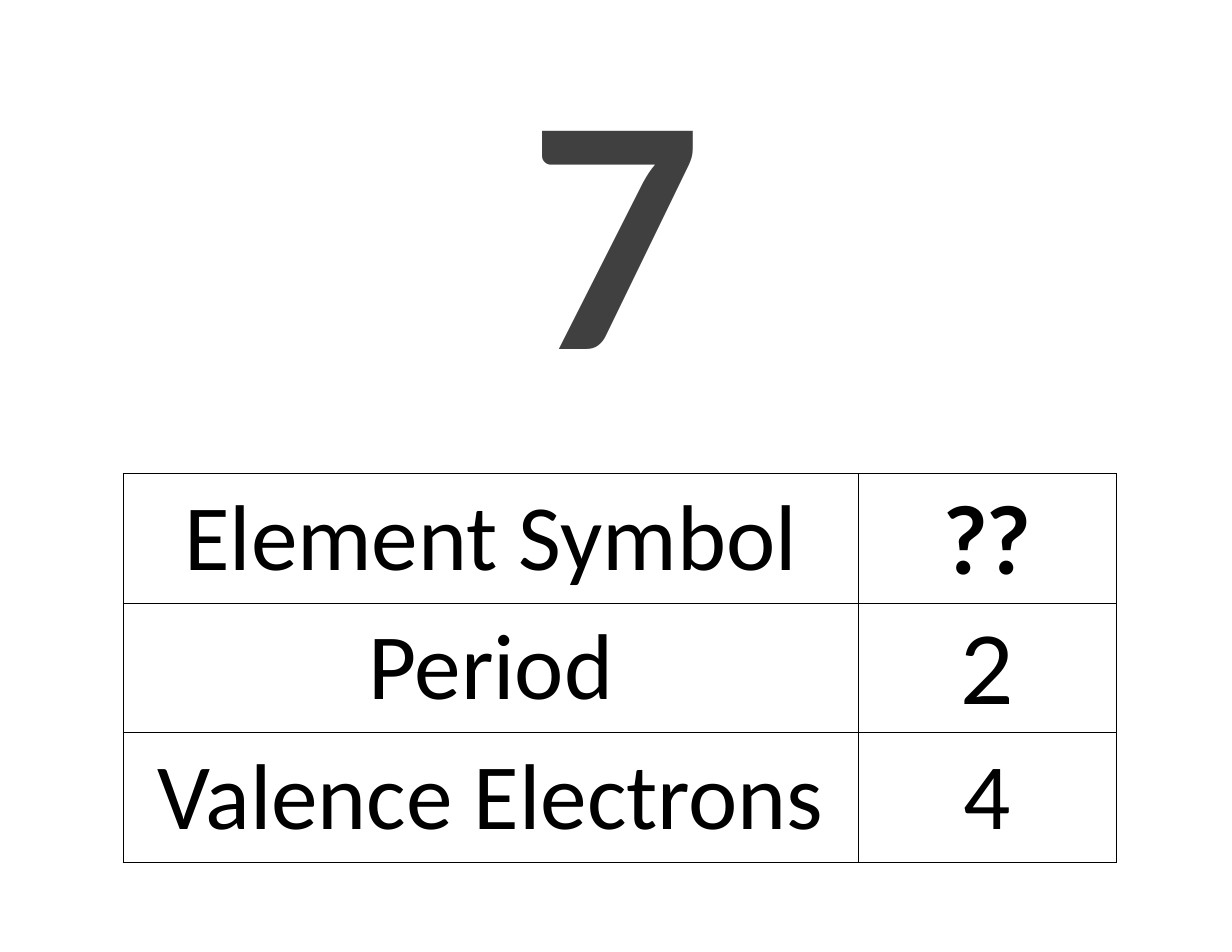
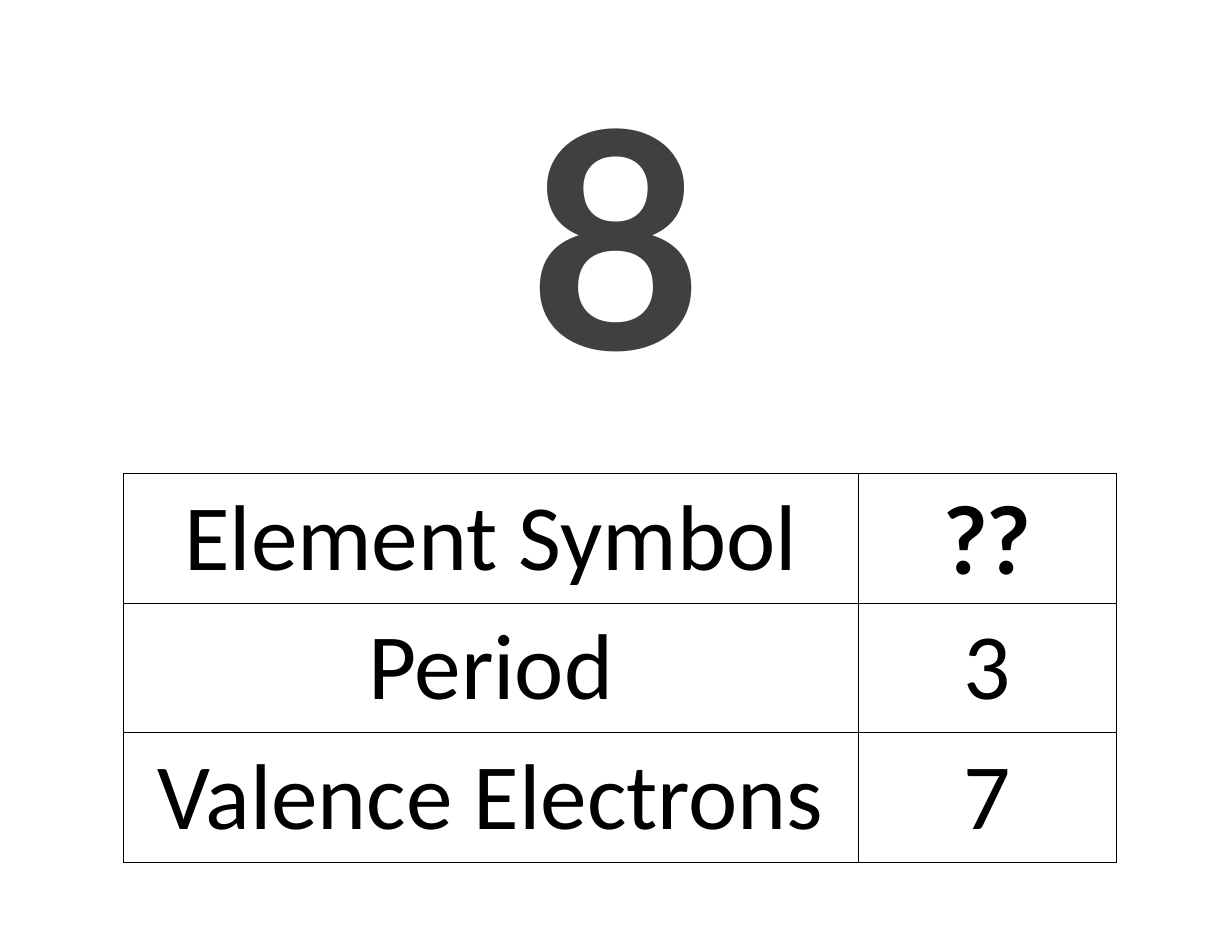
import pptx
import pptx.dml.color
import pptx.enum.text
import pptx.oxml.ns
import pptx.util
from lxml import etree

BLACK = pptx.dml.color.RGBColor(0x00, 0x00, 0x00)
CHARCOAL = pptx.dml.color.RGBColor(0x40, 0x40, 0x40)
BODY_FONT = "Calibri"
ACCENT_FONT = "Lato"
MIDDLE = pptx.enum.text.MSO_ANCHOR.MIDDLE
CENTER = pptx.enum.text.PP_ALIGN.CENTER

SLIDE_WIDTH, SLIDE_HEIGHT = 11, 8.5
NUMBER_BOX = (0, 0.76, SLIDE_WIDTH, 2.98)
TABLE_BOX = (1.1, 4.23, 8.87, 3.47)
LABEL_SHARE = 0.74
LABELS = ("Element Symbol", "Period", "Valence Electrons")

CARDS = (
    ("7", (("??", ACCENT_FONT, True), ("2", ACCENT_FONT, False), ("4", BODY_FONT, False))),
    ("8", (("??", ACCENT_FONT, True), ("3", BODY_FONT, False), ("7", BODY_FONT, False))),
)


def write(frame, text, font, size, color, bold=False):
    para = frame.paragraphs[0]
    para.text = text
    para.alignment = CENTER
    para.font.name = font
    para.font.size = pptx.util.Pt(size)
    para.font.bold = bold
    para.font.color.rgb = color
    return para


def add_number(page, box, number):
    frame = page.shapes.add_textbox(*map(pptx.util.Inches, box)).text_frame
    frame.word_wrap = True
    frame.vertical_anchor = MIDDLE
    para = write(frame, number, ACCENT_FONT, 194, CHARCOAL, True)
    para.line_spacing = 0.9


def add_borders(cell):
    properties = cell._tc.get_or_add_tcPr()
    for position, side in enumerate(("lnL", "lnR", "lnT", "lnB")):
        line = etree.Element(pptx.oxml.ns.qn(f"a:{side}"), w=str(pptx.util.Pt(1)))
        fill = etree.SubElement(line, pptx.oxml.ns.qn("a:solidFill"))
        etree.SubElement(fill, pptx.oxml.ns.qn("a:srgbClr"), val=str(BLACK))
        properties.insert(position, line)


def add_facts(page, box, values):
    table = page.shapes.add_table(len(LABELS), 2, *map(pptx.util.Inches, box)).table
    table.first_row = False
    table.horz_banding = False
    width, height = box[2:]
    for column, share in zip(table.columns, (LABEL_SHARE, 1 - LABEL_SHARE)):
        column.width = pptx.util.Inches(width * share)
    for row, label, value in zip(table.rows, LABELS, values):
        row.height = pptx.util.Inches(height / len(LABELS))
        for cell, entry in zip(row.cells, ((label, BODY_FONT, False), value)):
            text, font, bold = entry
            cell.fill.background()
            cell.vertical_anchor = MIDDLE
            write(cell.text_frame, text, font, 60, BLACK, bold)
            add_borders(cell)


def add_card(deck, number, values):
    page = deck.slides.add_slide(deck.slide_layouts[6])
    add_number(page, NUMBER_BOX, number)
    add_facts(page, TABLE_BOX, values)


def main():
    deck = pptx.Presentation()
    deck.slide_width = pptx.util.Inches(SLIDE_WIDTH)
    deck.slide_height = pptx.util.Inches(SLIDE_HEIGHT)
    for number, values in CARDS:
        add_card(deck, number, values)
    deck.save("out.pptx")


if __name__ == "__main__":
    main()
